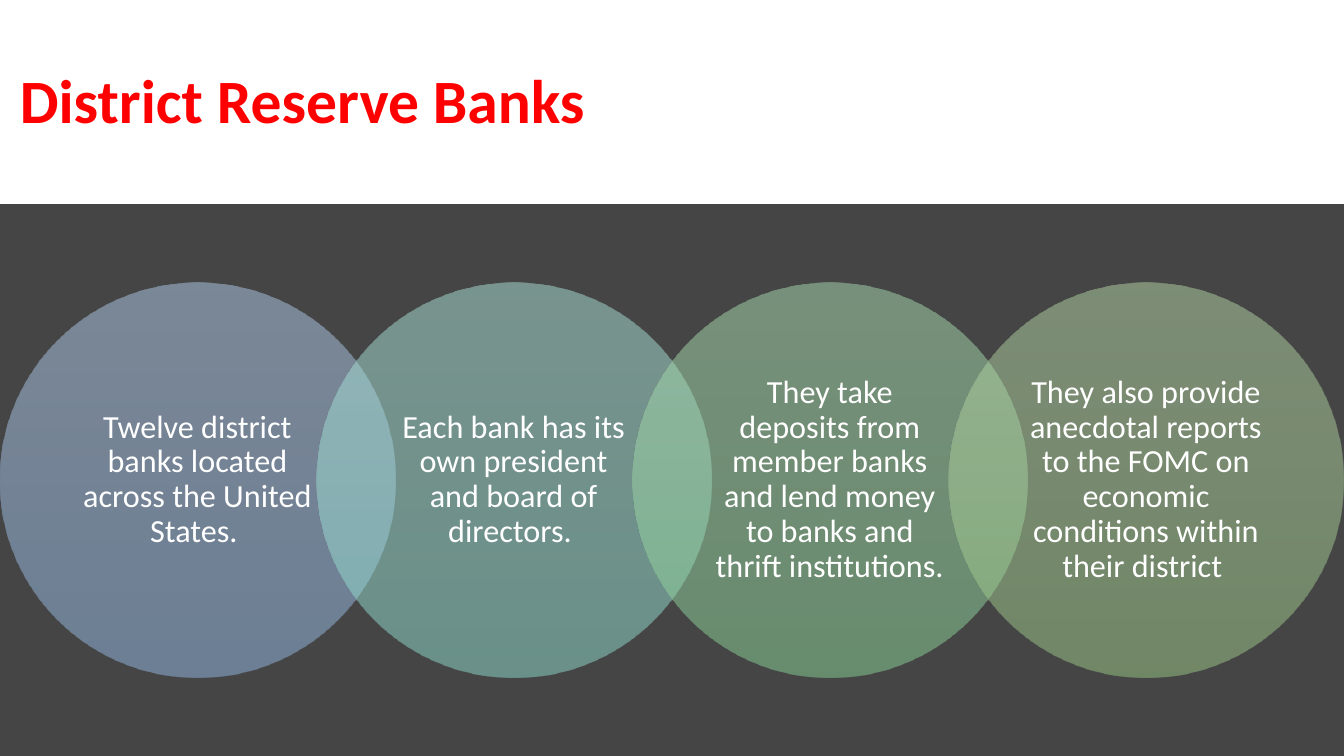
import copy

import pptx
import pptx.dml.color
import pptx.enum.shapes
import pptx.enum.text
import pptx.oxml
import pptx.oxml.ns
import pptx.util
from pptx.util import Cm

SLIDE_WIDTH = 33.87
DIAMETER = 9.96
STEP = 0.8 * DIAMETER
CIRCLES_TOP = 7.11

FACTS = [
    ("Twelve district banks located across the United States. ",
     ("B1CBE9", "A3C1E5", "93B9E4")),
    ("Each bank has its own president and board of directors. ",
     ("ADE3D9", "9FDED2", "8EDCCE")),
    ("They take deposits from member banks and lend money to banks and thrift institutions.",
     ("AADCB2", "9CD6A5", "8AD396")),
    ("They also provide anecdotal reports to the FOMC on economic conditions within their district ",
     ("B5D5A7", "AACE9A", "9CC987")),
]


def colour(value):
    """Turn a hex string into a colour."""
    return pptx.dml.color.RGBColor.from_string(value)


def write_text(frame, text, size, hex_colour, align, bold=False):
    """Write one vertically centred paragraph into a text frame."""
    frame.word_wrap = True
    frame.vertical_anchor = pptx.enum.text.MSO_ANCHOR.MIDDLE
    paragraph = frame.paragraphs[0]
    paragraph.text = text
    paragraph.alignment = align
    paragraph.line_spacing = 0.9
    paragraph.font.name = "Calibri"
    paragraph.font.size = pptx.util.Pt(size)
    paragraph.font.bold = bold
    paragraph.font.color.rgb = colour(hex_colour)


def fill_translucent_gradient(shape, hex_colours):
    """Fill a shape from top to bottom with evenly spaced half-transparent colours."""
    shape.fill.gradient()
    shape.fill.gradient_angle = 270
    qn = pptx.oxml.ns.qn
    stop_list = next(shape.element.iter(qn("a:gsLst")))
    stop_list.append(copy.deepcopy(stop_list[0]))
    stops = shape.fill.gradient_stops
    for index, (stop, hex_colour) in enumerate(zip(stops, hex_colours)):
        stop.position = index / (len(hex_colours) - 1)
        stop.color.rgb = colour(hex_colour)
    for rgb in stop_list.iter(qn("a:srgbClr")):
        alpha = pptx.oxml.parse_xml(f"<a:alpha {pptx.oxml.ns.nsdecls('a')} val='50000'/>")
        rgb.append(alpha)


def add_header(slide, text):
    """Add the white band with the slide title."""
    band = slide.shapes.add_shape(
        pptx.enum.shapes.MSO_SHAPE.RECTANGLE, Cm(0), Cm(-0.02), Cm(SLIDE_WIDTH), Cm(5.16))
    band.shadow.inherit = False
    band.fill.solid()
    band.fill.fore_color.rgb = colour("FFFFFF")
    band.line.fill.background()
    title = slide.shapes.add_textbox(Cm(0.25), Cm(1.02), Cm(33.4), Cm(3.2))
    write_text(title.text_frame, text, 44, "FF0000", pptx.enum.text.PP_ALIGN.LEFT, True)


def add_fact_circle(slide, left, text, hex_colours):
    """Add one translucent circle with its fact."""
    circle = slide.shapes.add_shape(
        pptx.enum.shapes.MSO_SHAPE.OVAL, Cm(left), Cm(CIRCLES_TOP), Cm(DIAMETER), Cm(DIAMETER))
    circle.shadow.inherit = False
    circle.line.fill.background()
    fill_translucent_gradient(circle, hex_colours)
    frame = circle.text_frame
    frame.margin_left = frame.margin_right = Cm(0.56)
    frame.margin_top = frame.margin_bottom = Cm(0.08)
    write_text(frame, text, 23, "FFFFFF", pptx.enum.text.PP_ALIGN.CENTER)


def main():
    """Build the slide and save it."""
    presentation = pptx.Presentation()
    presentation.slide_width = Cm(SLIDE_WIDTH)
    presentation.slide_height = Cm(19.05)
    slide = presentation.slides.add_slide(presentation.slide_layouts[6])
    slide.background.fill.solid()
    slide.background.fill.fore_color.rgb = colour("454545")
    add_header(slide, "District Reserve Banks")
    for index, (text, hex_colours) in enumerate(FACTS):
        add_fact_circle(slide, index * STEP, text, hex_colours)
    presentation.save("out.pptx")


if __name__ == "__main__":
    main()
